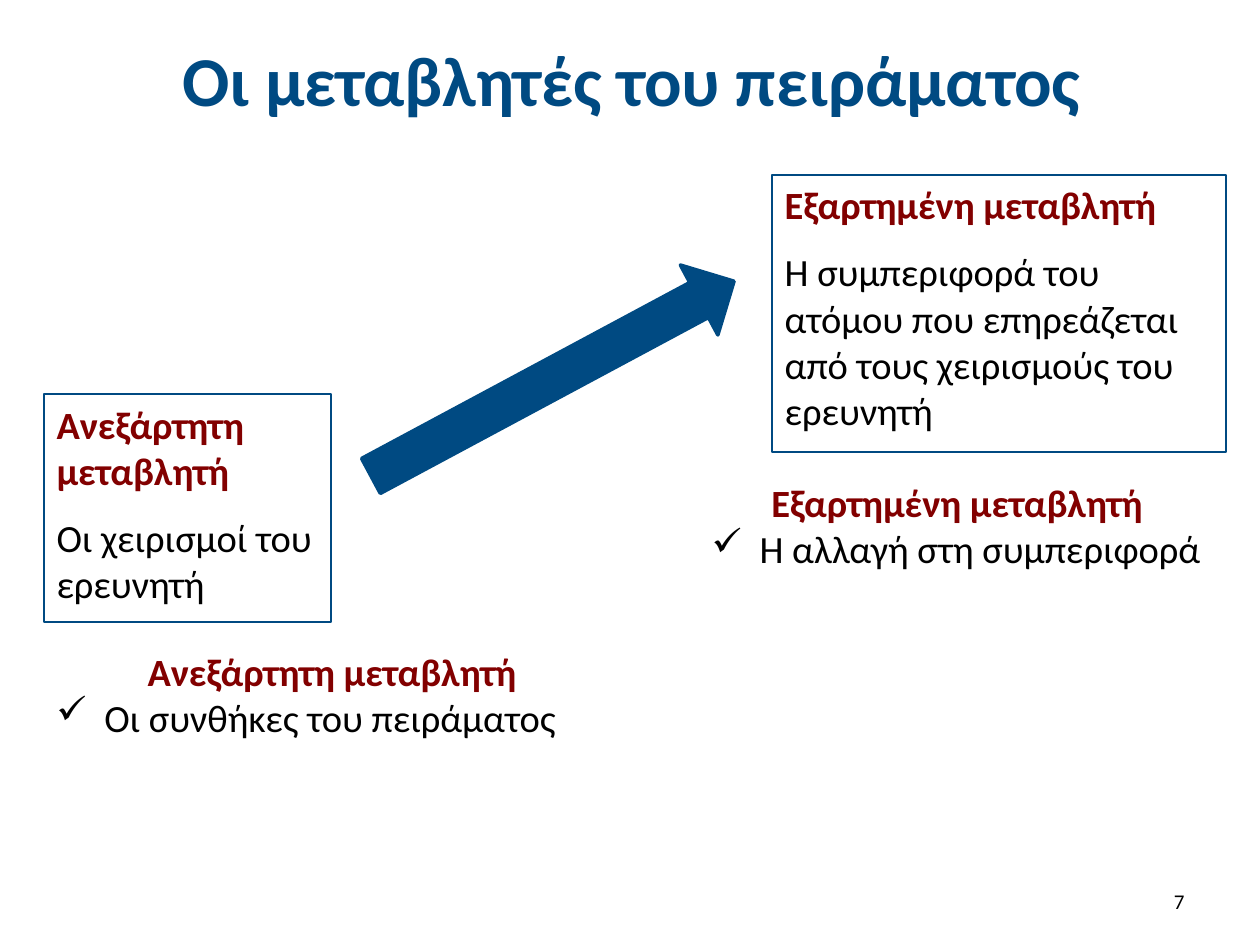
from lxml import etree
from pptx import Presentation
from pptx import util as u
from pptx.dml.color import RGBColor
from pptx.enum import shapes, text
from pptx.oxml.ns import qn

BLUE, RED, BLACK = "004A82", "820000", "000000"
DEPENDENT = "Εξαρτημένη μεταβλητή"
INDEPENDENT = "Ανεξάρτητη μεταβλητή"


def rgb(color):
    return RGBColor.from_string(color)


def add_text(p, content, size=22, color=BLACK, bold=False,
             align=text.PP_ALIGN.LEFT, before=0):
    p.alignment = align
    p.space_before = u.Pt(before)
    r = p.add_run()
    r.text = content
    r.font.name = "Calibri"
    r.font.size = u.Pt(size)
    r.font.bold = bold
    r.font.color.rgb = rgb(color)


def add_bullet(p, char="✓", indent=0.38):
    pPr = p._p.get_or_add_pPr()
    pPr.set("marL", str(u.Inches(indent)))
    pPr.set("indent", str(-u.Inches(indent)))
    etree.SubElement(pPr, qn("a:buChar")).set("char", char)


def add_textbox(s, box, anchor=text.MSO_ANCHOR.TOP):
    tf = s.shapes.add_textbox(*map(u.Inches, box)).text_frame
    tf.word_wrap = True
    tf.vertical_anchor = anchor
    return tf


def add_outlined(s, kind, box, width):
    sp = s.shapes.add_shape(kind, *map(u.Inches, box))
    sp.shadow.inherit = False
    sp.fill.background()
    sp.line.color.rgb = rgb(BLUE)
    sp.line.width = u.Pt(width)
    return sp


def add_definition(s, box, heading, body):
    sp = add_outlined(s, shapes.MSO_SHAPE.RECTANGLE, box, 1.25)
    tf = sp.text_frame
    tf.word_wrap = True
    tf.vertical_anchor = text.MSO_ANCHOR.TOP
    add_text(tf.paragraphs[0], heading, color=RED, bold=True, before=12)
    add_text(tf.add_paragraph(), body, before=12)


def add_example(s, box, heading, body):
    tf = add_textbox(s, box)
    tf.auto_size = text.MSO_AUTO_SIZE.SHAPE_TO_FIT_TEXT
    add_text(tf.paragraphs[0], heading, color=RED, bold=True,
             align=text.PP_ALIGN.CENTER)
    p = tf.add_paragraph()
    add_text(p, body)
    add_bullet(p)


def add_arrow(s, box, rotation):
    sp = add_outlined(s, shapes.MSO_SHAPE.UP_ARROW, box, 2)
    sp.fill.solid()
    sp.fill.fore_color.rgb = rgb(BLUE)
    sp.rotation = rotation


def main():
    prs = Presentation()
    prs.slide_width, prs.slide_height = u.Inches(10), u.Inches(7.5)
    s = prs.slides.add_slide(prs.slide_layouts[6])

    title = add_textbox(s, (0.51, 0.13, 9, 0.99), text.MSO_ANCHOR.MIDDLE)
    add_text(title.paragraphs[0], "Οι μεταβλητές του πειράματος", size=40,
             color=BLUE, bold=True, align=text.PP_ALIGN.CENTER)
    add_definition(s, (0.35, 3.13, 2.28, 1.81), INDEPENDENT,
                   "Οι χειρισμοί του ερευνητή")
    number = add_textbox(s, (7.17, 6.95, 2.33, 0.4), text.MSO_ANCHOR.MIDDLE)
    add_text(number.paragraphs[0], "7", size=12, align=text.PP_ALIGN.RIGHT)
    add_arrow(s, (4.07, 1.37, 0.63, 3.27), 61.8)
    add_definition(s, (6.13, 1.39, 3.6, 2.2), DEPENDENT,
                   "Η συμπεριφορά του ατόμου που επηρεάζεται "
                   "από τους χειρισμούς του ερευνητή")
    add_example(s, (5.55, 3.75, 4.09, 0.84), DEPENDENT,
                "Η αλλαγή στη συμπεριφορά")
    add_example(s, (0.35, 5.09, 4.57, 0.84), INDEPENDENT,
                "Οι συνθήκες του πειράματος")
    prs.save("out.pptx")


if __name__ == "__main__":
    main()
